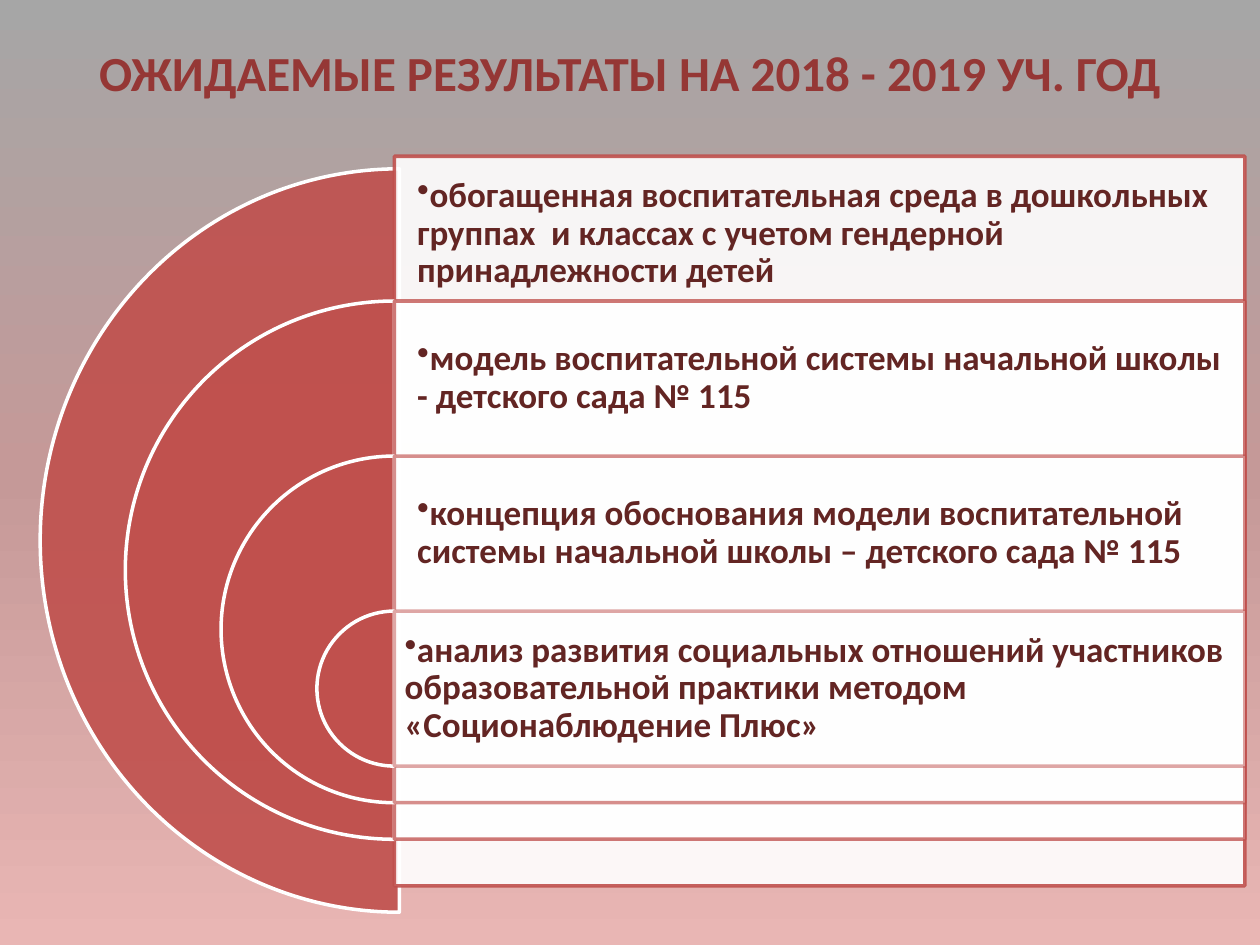
from copy import deepcopy

from pptx import Presentation
from pptx.dml.color import RGBColor
from pptx.enum.shapes import MSO_SHAPE
from pptx.enum.text import MSO_ANCHOR, PP_ALIGN
from pptx.oxml.ns import qn
from pptx.util import Pt

PIE, RECTANGLE = MSO_SHAPE.PIE, MSO_SHAPE.RECTANGLE
TOP, MIDDLE = MSO_ANCHOR.TOP, MSO_ANCHOR.MIDDLE
LEFT, CENTER = PP_ALIGN.LEFT, PP_ALIGN.CENTER

BACKGROUND = (RGBColor(0xA6, 0xA6, 0xA6), RGBColor(0xC5, 0x99, 0x98), RGBColor(0xE9, 0xB6, 0xB4))
TITLE_RED = RGBColor(0x95, 0x37, 0x35)
TEXT_RED = RGBColor(0x63, 0x25, 0x23)
RED = RGBColor(0xC0, 0x50, 0x4D)
WHITE = RGBColor(0xFF, 0xFF, 0xFF)

PANEL_LEFT, PANEL_WIDTH, ROW_HEIGHT = 225.4, 486, 88.6
INSET = 5.76


def add_panel(kind, box, fill, line):
    """Add a shape; fill and line are (colour, opacity in percent) pairs."""
    shape = slide.shapes.add_shape(kind, *map(Pt, box))
    shape.shadow.inherit = False
    shape.fill.solid()
    shape.line.width = Pt(2)
    for target, (color, opacity) in ((shape.fill, fill), (shape.line.fill, line)):
        target.solid()
        target.fore_color.rgb = color
    colors = shape._element.spPr.iter(qn("a:srgbClr"))
    for element, (color, opacity) in zip(colors, (fill, line)):
        alpha = element.makeelement(qn("a:alpha"), {"val": str(opacity * 1000)})
        element.append(alpha)
    return shape


def add_text(text, box, anchor, alignment, size, color, inset):
    frame = slide.shapes.add_textbox(*map(Pt, box)).text_frame
    frame_format = {"word_wrap": True, "vertical_anchor": anchor}
    for side in ("left", "top", "right", "bottom"):
        frame_format["margin_" + side] = Pt(inset)
    for name, value in frame_format.items():
        setattr(frame, name, value)
    paragraph = frame.paragraphs[0]
    paragraph.text = text
    paragraph.alignment = alignment
    for name, value in {"name": "Calibri", "size": Pt(size), "bold": True}.items():
        setattr(paragraph.runs[0].font, name, value)
    paragraph.runs[0].font.color.rgb = color
    return paragraph


presentation = Presentation()
presentation.slide_width, presentation.slide_height = Pt(720), Pt(540)
slide = presentation.slides.add_slide(presentation.slide_layouts[6])

# Background gradient, top to bottom
background = slide.background.fill
background.gradient()
background.gradient_angle = 270
stop_list = slide._element.find(".//" + qn("a:gsLst"))
stop_list.append(deepcopy(stop_list[-1]))
for stop, color, position in zip(background.gradient_stops, BACKGROUND, (0, 0.5, 1)):
    stop.color.rgb = color
    stop.position = position

add_text("ОЖИДАЕМЫЕ РЕЗУЛЬТАТЫ НА 2018 - 2019 УЧ. ГОД", (31, 21, 657.5, 483),
         TOP, CENTER, 28, TITLE_RED, 3.6)

# Pie box, panel top, panel height, opacity, text indent, text
results = [
    ((23, 96.5, 410.4, 424.8), 89.3, 416.9, 90, 7.2,
     "обогащенная воспитательная среда в дошкольных группах  и классах "
     "с учетом гендерной принадлежности детей"),
]
nested_results = [
    (77, 7.2, "модель воспитательной системы начальной школы - детского сада № 115"),
    (63, 7.2, "концепция обоснования модели воспитательной системы начальной школы "
              "– детского сада № 115"),
    (50, 0, "анализ развития социальных отношений участников образовательной "
            "практики методом «Соционаблюдение Плюс»"),
]
for index, (opacity, indent, text) in enumerate(nested_results):
    diameter = 307.6 - 109.5 * index
    top = 172 + ROW_HEIGHT * index
    pie_box = (PANEL_LEFT - diameter / 2, top, diameter, diameter)
    results.append((pie_box, top, diameter, opacity, indent, text))

for pie_box, top, height, opacity, indent, text in results:
    pie = add_panel(PIE, pie_box, (RED, opacity), (WHITE, 100))
    pie.adjustments[0], pie.adjustments[1] = 54, 162  # left half
    add_panel(RECTANGLE, (PANEL_LEFT, top, PANEL_WIDTH, height), (WHITE, 90), (RED, opacity))
    paragraph = add_text(text, (PANEL_LEFT, top, PANEL_WIDTH, ROW_HEIGHT),
                         MIDDLE, LEFT, 20, TEXT_RED, INSET)
    paragraph.line_spacing = 0.9
    properties = paragraph._p.get_or_add_pPr()
    properties.set("marL", str(Pt(indent)))
    properties.set("indent", "0")
    properties.append(properties.makeelement(qn("a:buChar"), {"char": "•"}))

presentation.save("out.pptx")
